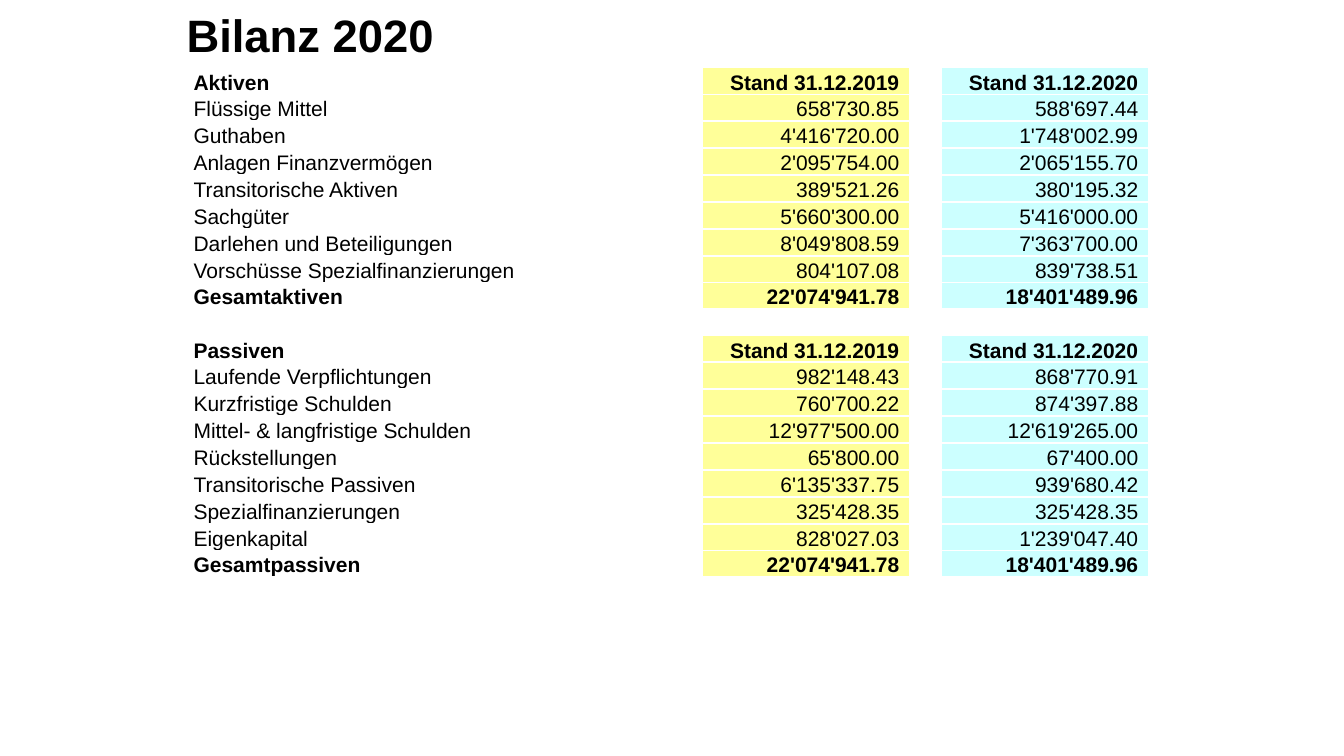
from dataclasses import dataclass

from lxml.etree import SubElement
from pptx import Presentation
from pptx.dml.color import RGBColor
from pptx.enum.text import MSO_ANCHOR as ANCHOR, MSO_AUTO_SIZE as FIT, PP_ALIGN as ALIGN
from pptx.oxml.ns import qn
from pptx.util import Inches, Pt


@dataclass(frozen=True)
class Theme:
    font: str = "Arial"
    ink: str = "000000"
    paper: str = "FFFFFF"
    year_2019: str = "FFFF99"
    year_2020: str = "CCFFFF"
    title_size: float = 32.4
    table_size: float = 15
    border_width: float = 1.5


class BalanceSlide:
    def __init__(self, prs, theme):
        self.theme = theme
        self.slide = prs.slides.add_slide(prs.slide_layouts[5])

    def run(self, p, text, size, bold):
        r = p.add_run()
        r.text = text
        r.font.name = self.theme.font
        r.font.size = Pt(size)
        r.font.bold = bold
        r.font.color.rgb = RGBColor.from_string(self.theme.ink)

    def title(self, text, left, top, width, height):
        sp = self.slide.shapes.title
        sp.left, sp.top = Inches(left), Inches(top)
        sp.width, sp.height = Inches(width), Inches(height)
        tf = sp.text_frame
        tf.auto_size = FIT.NONE
        tf.vertical_anchor = ANCHOR.MIDDLE
        p = tf.paragraphs[0]
        p.alignment = ALIGN.LEFT
        p.line_spacing = 0.9
        self.run(p, text, self.theme.title_size, True)

    def borders(self, cell):
        tc_pr = cell._tc.get_or_add_tcPr()
        for i, side in enumerate(("a:lnL", "a:lnR", "a:lnT", "a:lnB")):
            ln = tc_pr.makeelement(qn(side), w=str(Pt(self.theme.border_width)))
            fill = SubElement(ln, qn("a:solidFill"))
            SubElement(fill, qn("a:srgbClr"), val=self.theme.paper)
            tc_pr.insert(i, ln)

    def cell(self, cell, text, bold, align, color):
        cell.margin_left = cell.margin_right = Inches(0.11)
        cell.margin_top = cell.margin_bottom = 0
        cell.vertical_anchor = ANCHOR.MIDDLE
        p = cell.text_frame.paragraphs[0]
        if text:
            p.alignment = align
            p.line_spacing = 1.15
            p.space_after = Pt(10)
            self.run(p, text, self.theme.table_size, bold)
        else:
            SubElement(p._p, qn("a:endParaRPr"), sz=str(self.theme.table_size * 100))
        if text and color:
            cell.fill.solid()
            cell.fill.fore_color.rgb = RGBColor.from_string(color)
        else:
            cell.fill.background()
        self.borders(cell)

    def table(self, rows, bold_rows, left, top, widths, row_height):
        frame = self.slide.shapes.add_table(
            len(rows), len(widths), Inches(left), Inches(top),
            Inches(sum(widths)), Inches(row_height * len(rows)))
        tbl = frame.table
        tbl.first_row = tbl.horz_banding = False
        for col, width in zip(tbl.columns, widths):
            col.width = Inches(width)
        colors = (None, self.theme.year_2019, None, self.theme.year_2020)
        for i, (label, *amounts) in enumerate(rows):
            tbl.rows[i].height = Inches(row_height)
            texts = (label, amounts[0], "", amounts[1])
            for j, (text, color) in enumerate(zip(texts, colors)):
                align = ALIGN.RIGHT if j else ALIGN.LEFT
                self.cell(tbl.cell(i, j), text, i in bold_rows, align, color)


STAND = ("Stand 31.12.2019", "Stand 31.12.2020")
TOTAL = ("22'074'941.78", "18'401'489.96")
AKTIVEN = [
    ("Aktiven", *STAND),
    ("Flüssige Mittel", "658'730.85", "588'697.44"),
    ("Guthaben", "4'416'720.00", "1'748'002.99"),
    ("Anlagen Finanzvermögen", "2'095'754.00", "2'065'155.70"),
    ("Transitorische Aktiven", "389'521.26", "380'195.32"),
    ("Sachgüter", "5'660'300.00", "5'416'000.00"),
    ("Darlehen und Beteiligungen", "8'049'808.59", "7'363'700.00"),
    ("Vorschüsse Spezialfinanzierungen", "804'107.08", "839'738.51"),
    ("Gesamtaktiven", *TOTAL),
]
PASSIVEN = [
    ("Passiven", *STAND),
    ("Laufende Verpflichtungen", "982'148.43", "868'770.91"),
    ("Kurzfristige Schulden", "760'700.22", "874'397.88"),
    ("Mittel- & langfristige Schulden", "12'977'500.00", "12'619'265.00"),
    ("Rückstellungen", "65'800.00", "67'400.00"),
    ("Transitorische Passiven", "6'135'337.75", "939'680.42"),
    ("Spezialfinanzierungen", "325'428.35", "325'428.35"),
    ("Eigenkapital", "828'027.03", "1'239'047.40"),
    ("Gesamtpassiven", *TOTAL),
]


def main():
    """Build the 2020 balance sheet slide."""
    prs = Presentation()
    prs.slide_width, prs.slide_height = Inches(13.33), Inches(7.5)
    s = BalanceSlide(prs, Theme())
    s.title("Bilanz 2020", 1.75, 0.08, 11.14, 0.59)
    rows = AKTIVEN + [("", "", "")] + PASSIVEN
    passiven_start = len(AKTIVEN) + 1
    bold_rows = {0, len(AKTIVEN) - 1, passiven_start, len(rows) - 1}
    s.table(rows, bold_rows, 1.81, 0.67, (5.15, 2.07, 0.3, 2.07), 0.26)
    prs.save("out.pptx")


if __name__ == "__main__":
    main()
